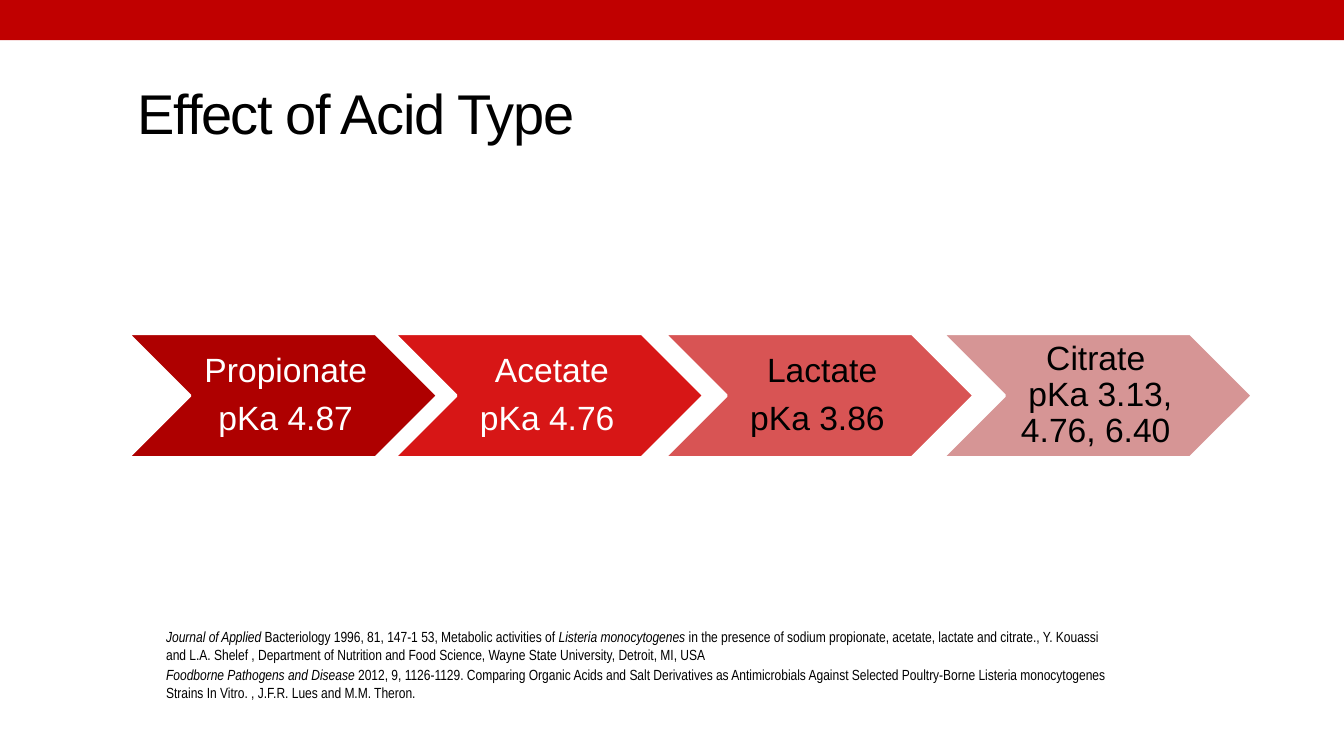
from dataclasses import dataclass

from pptx import Presentation
from pptx import util as u
from pptx.dml.color import RGBColor
from pptx.enum import shapes, text

EMU_PER_PX = 9144


def px(length):
    return u.Emu(length * EMU_PER_PX)


def colour(code):
    return RGBColor.from_string(code)


@dataclass
class Page:
    slide: object
    font: str = "Arial"
    narrow_font: str = "Arial Narrow"
    ink: str = "000000"
    paper: str = "FFFFFF"

    def style(self, run, size, font, code):
        run.font.size = u.Pt(size)
        run.font.name = font
        run.font.color.rgb = colour(code)

    def shape(self, kind, box, fill):
        figure = self.slide.shapes.add_shape(kind, *map(px, box))
        figure.shadow.inherit = False
        figure.fill.solid()
        figure.fill.fore_color.rgb = colour(fill)
        figure.line.fill.background()
        return figure

    def text_frame(self, box):
        frame = self.slide.shapes.add_textbox(*map(px, box)).text_frame
        frame.word_wrap = True
        return frame

    def title(self, box, wording):
        frame = self.text_frame(box)
        frame.vertical_anchor = text.MSO_ANCHOR.MIDDLE
        frame.text = wording
        run = frame.paragraphs[0].runs[0]
        self.style(run, 40, self.font, self.ink)
        run.font._element.set("spc", "-100")

    def chevron(self, box, fill, ink, wording):
        acid = self.shape(shapes.MSO_SHAPE.CHEVRON, box, fill)
        acid.line.color.rgb = colour(self.paper)
        acid.line.width = u.Pt(2.08)
        frame = acid.text_frame
        frame.word_wrap = True
        frame.vertical_anchor = text.MSO_ANCHOR.MIDDLE
        frame.margin_left = px(10)
        frame.margin_right = frame.margin_top = frame.margin_bottom = px(4)
        frame.text = wording
        for paragraph in frame.paragraphs:
            paragraph.alignment = text.PP_ALIGN.CENTER
            paragraph.line_spacing = 0.9
            paragraph.space_after = u.Pt(9)
            for run in paragraph.runs:
                self.style(run, 24, self.font, ink)

    def references(self, box, citations):
        frame = self.text_frame(box)
        for index, parts in enumerate(citations):
            paragraph = frame.paragraphs[0] if index == 0 else frame.add_paragraph()
            paragraph.space_after = u.Pt(2)
            for wording, italic in parts:
                run = paragraph.add_run()
                run.text = wording
                run.font.italic = italic
                self.style(run, 10.5, self.narrow_font, self.ink)


ACIDS = [
    (127, "AE0000", "FFFFFF", "Propionate\npKa 4.87"),
    (391, "D71616", "FFFFFF", "Acetate\npKa 4.76 "),
    (659, "D85454", "000000", "Lactate\npKa 3.86 "),
    (935, "D69595", "000000", "Citrate \vpKa 3.13, 4.76, 6.40 "),
]

CITATIONS = [
    [
        ("Journal of Applied ", True),
        ("Bacteriology 1996, 81, 147-1 53, Metabolic activities of ", False),
        ("Listeria monocytogenes ", True),
        ("in the presence of sodium propionate, acetate, lactate and citrate., "
         "Y. Kouassi and L.A. Shelef , Department of Nutrition and Food Science, "
         "Wayne State University, Detroit, MI, USA", False),
    ],
    [
        ("Foodborne Pathogens and Disease ", True),
        ("2012, 9, 1126-1129. Comparing Organic Acids and Salt Derivatives as "
         "Antimicrobials Against Selected Poultry-Borne Listeria monocytogenes "
         "Strains In Vitro. , J.F.R. Lues and M.M. Theron.", False),
    ],
]


def main():
    deck = Presentation()
    deck.slide_width, deck.slide_height = px(1333), px(750)
    page = Page(deck.slides.add_slide(deck.slide_layouts[6]))
    page.shape(shapes.MSO_SHAPE.RECTANGLE, (0, 0, 1333, 40), "C00000")
    page.title((127, 15, 1096, 192), "Effect of Acid Type")
    for left, fill, ink, wording in ACIDS:
        page.chevron((left, 331, 307, 123), fill, ink, wording)
    page.references((155, 618, 956, 84), CITATIONS)
    deck.save("out.pptx")


if __name__ == "__main__":
    main()
